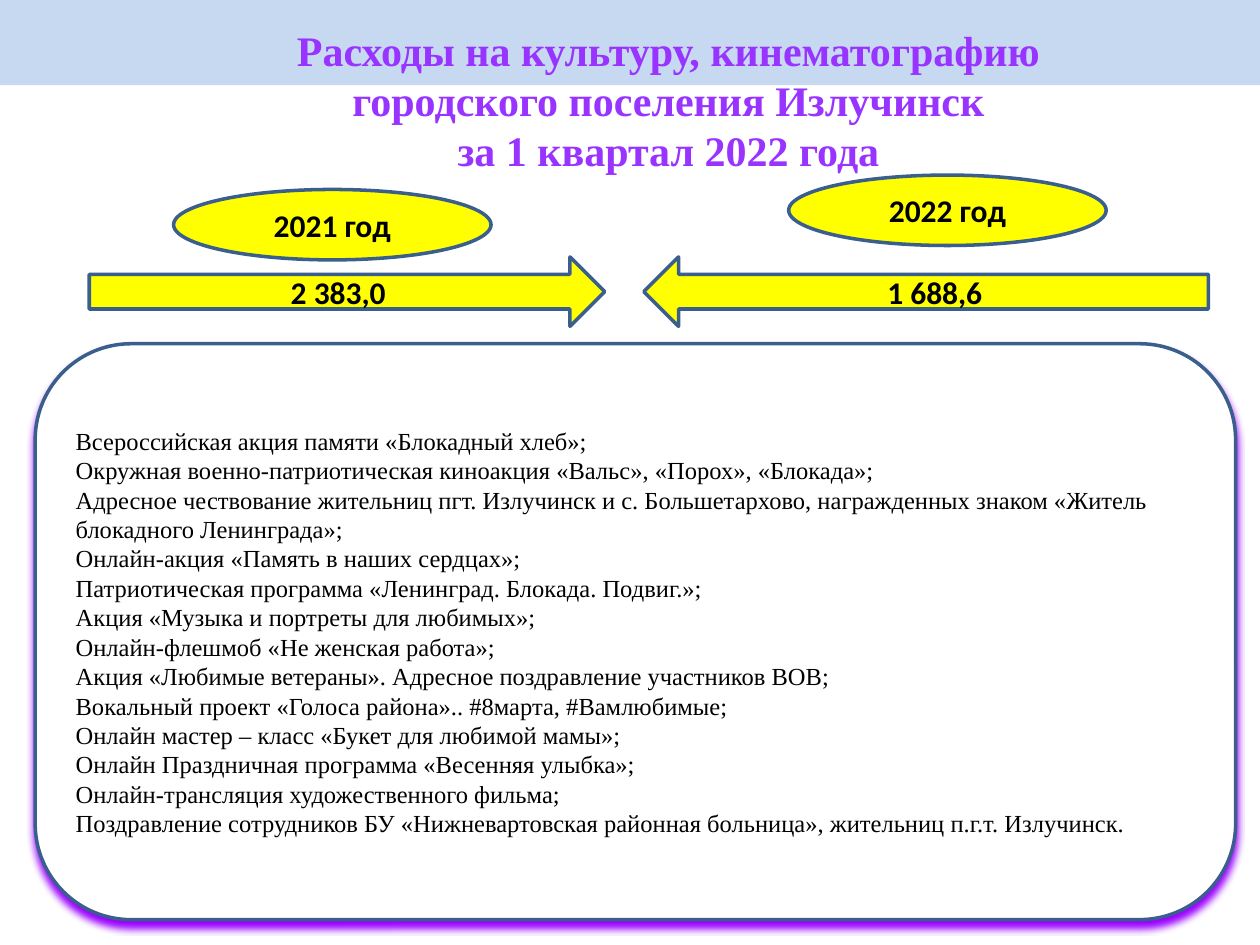
from dataclasses import dataclass

from lxml import etree
from pptx import Presentation
from pptx.dml.color import RGBColor
from pptx.enum.shapes import MSO_SHAPE as Shape
from pptx.enum.text import MSO_ANCHOR as Anchor, PP_ALIGN as Align
from pptx.oxml import parse_xml
from pptx.oxml.ns import nsdecls
from pptx.util import Cm, Pt


@dataclass(frozen=True)
class Theme:
    band: str = "C6D9F1"
    title: str = "9933FF"
    accent: str = "FFFF00"
    outline: str = "3A5F8C"
    glow: str = "9900FF"
    panel: str = "FFFFFF"
    ink: str = "000000"
    serif: str = "Times New Roman"
    sans: str = "Calibri"
    title_size: int = 24
    label_size: int = 18
    body_size: int = 14
    line_width: int = 2


THEME = Theme()


def write_text(shape, lines, *, font, size, color, bold=False,
               align=Align.CENTER, anchor=Anchor.MIDDLE):
    frame = shape.text_frame
    frame.word_wrap = True
    frame.vertical_anchor = anchor
    frame.text = "\n".join(lines)
    for paragraph in frame.paragraphs:
        paragraph.alignment = align
        paragraph.font.name = font
        paragraph.font.size = Pt(size)
        paragraph.font.bold = bold
        paragraph.font.color.rgb = RGBColor.from_string(color)


def add_filled(kind, box, fill, outline=None):
    shape = slide.shapes.add_shape(kind, *(Cm(length) for length in box))
    shape.shadow.inherit = False
    shape.fill.solid()
    shape.fill.fore_color.rgb = RGBColor.from_string(fill)
    if outline:
        shape.line.color.rgb = RGBColor.from_string(outline)
        shape.line.width = Pt(THEME.line_width)
    else:
        shape.line.fill.background()
    return shape


presentation = Presentation()
presentation.slide_width, presentation.slide_height = Cm(25.4), Cm(19.05)
slide = presentation.slides.add_slide(presentation.slide_layouts[6])

# Heading
add_filled(Shape.RECTANGLE, (0, 0, 25.4, 1.72), THEME.band)
title = slide.shapes.add_textbox(Cm(2.64), Cm(0.36), Cm(21.67), Cm(3.18))
write_text(
    title,
    ["Расходы на культуру, кинематографию",
     "городского поселения Излучинск",
     "за 1 квартал 2022 года"],
    font=THEME.serif, size=THEME.title_size, color=THEME.title, bold=True,
    anchor=Anchor.TOP,
)

# Spending by year
year_labels = [
    (Shape.RIGHT_ARROW, (1.8, 5.18, 10.39, 1.4), "2 383,0"),
    (Shape.LEFT_ARROW, (12.98, 5.18, 11.38, 1.4), "1 688,6"),
    (Shape.OVAL, (3.5, 3.82, 6.4, 1.42), "2021 год"),
    (Shape.OVAL, (15.9, 3.53, 6.4, 1.42), "2022 год"),
]
for kind, box, label in year_labels:
    shape = add_filled(kind, box, THEME.accent, THEME.outline)
    write_text(shape, [label], font=THEME.sans, size=THEME.label_size,
               color=THEME.ink, bold=True)

# Events
events = [
    "Всероссийская акция памяти «Блокадный хлеб»;",
    "Окружная военно-патриотическая киноакция «Вальс», «Порох», «Блокада»;",
    "Адресное чествование жительниц пгт. Излучинск и с. Большетархово, "
    "награжденных знаком «Житель блокадного Ленинграда»;",
    "Онлайн-акция «Память в наших сердцах»;",
    "Патриотическая программа «Ленинград. Блокада. Подвиг.»;",
    "Акция «Музыка и портреты для любимых»;",
    "Онлайн-флешмоб «Не женская работа»;",
    "Акция «Любимые ветераны». Адресное поздравление участников ВОВ;",
    "Вокальный проект «Голоса района».. #8марта, #Вамлюбимые;",
    "Онлайн мастер – класс «Букет для любимой мамы»;",
    "Онлайн Праздничная программа «Весенняя улыбка»;",
    "Онлайн-трансляция художественного фильма;",
    "Поздравление сотрудников БУ «Нижневартовская районная больница», "
    "жительниц п.г.т. Излучинск.",
]
panel = add_filled(Shape.ROUNDED_RECTANGLE, (0.71, 6.93, 24.2, 11.61),
                   THEME.panel, THEME.outline)
effects = panel.element.spPr.find("{*}effectLst")
shadow = parse_xml(
    f'<a:outerShdw {nsdecls("a")} blurRad="{Pt(4)}" dist="{Pt(4)}" '
    f'dir="5400000" algn="ctr" rotWithShape="0"/>'
)
etree.SubElement(shadow, shadow.tag.replace("outerShdw", "srgbClr"), val=THEME.glow)
effects.append(shadow)
write_text(panel, events, font=THEME.serif, size=THEME.body_size,
           color=THEME.ink, align=Align.LEFT)

presentation.save("out.pptx")
